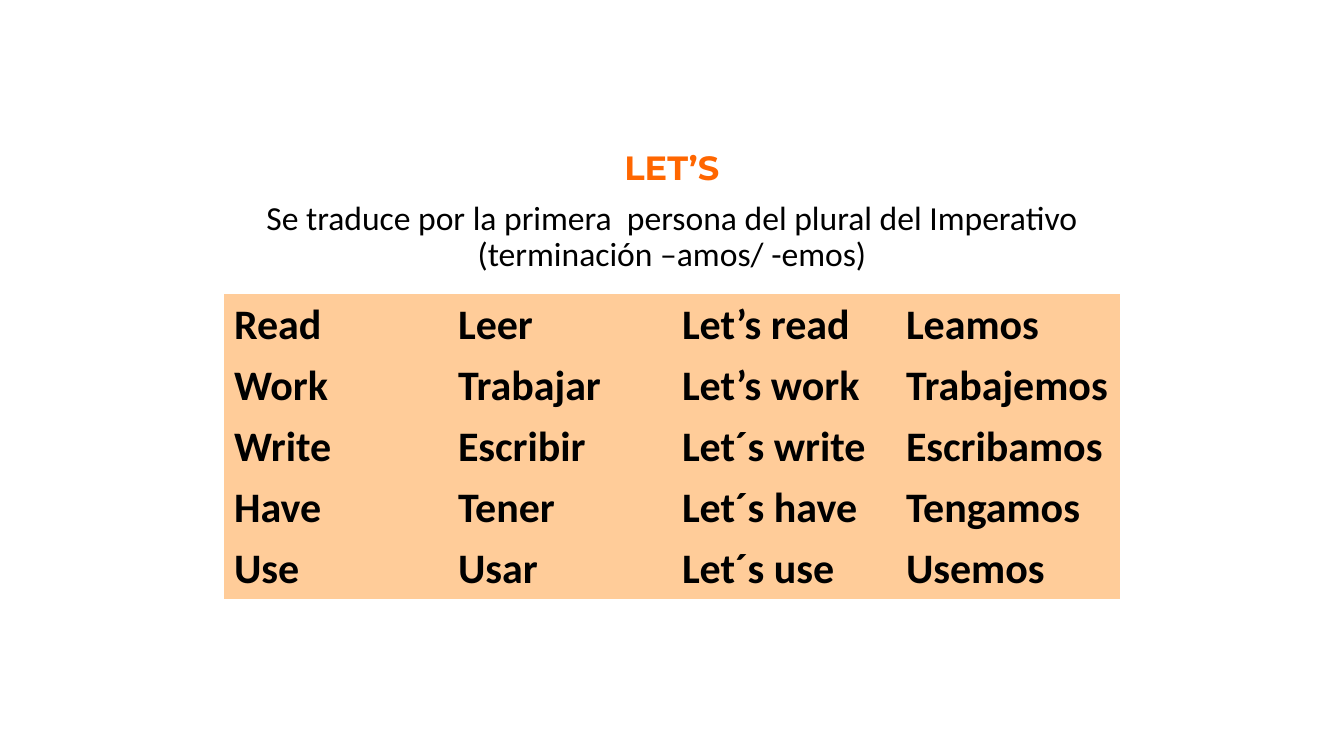
from pptx import Presentation
from pptx.dml.color import RGBColor as Color
from pptx.enum.text import MSO_ANCHOR as Anchor, PP_ALIGN as Align
from pptx.util import Emu, Pt

EMU_PER_PX = 914400 / 100.8
COLORS = {"title": "FF6600", "text": "000000", "cell": "FFCC99"}
EXPLANATION = (
    "Se traduce por la primera  persona del plural del Imperativo "
    "(terminación –amos/ -emos)"
)
VERBS = [
    ("Read", "Leer", "Let’s read", "Leamos"),
    ("Work", "Trabajar", "Let’s work", "Trabajemos"),
    ("Write", "Escribir", "Let´s write", "Escribamos"),
    ("Have", "Tener", "Let´s have", "Tengamos"),
    ("Use", "Usar", "Let´s use", "Usemos"),
]


def px(length):
    """Turn whole pixels into EMU."""
    return Emu(round(length * EMU_PER_PX))


def write(paragraph, text, *, size, font="Calibri", color="text", bold=False,
          align=Align.LEFT, line_spacing=None, space_before=None):
    """Put one formatted run of text into a paragraph."""
    paragraph.alignment = align
    if line_spacing is not None:
        paragraph.line_spacing = line_spacing
    if space_before is not None:
        paragraph.space_before = Pt(space_before)
    run = paragraph.add_run()
    run.text = text
    run.font.name = font
    run.font.size = Pt(size)
    run.font.bold = bold
    run.font.color.rgb = Color.from_string(COLORS[color])


def add_heading(slide, left, top, width, height):
    """Add the title with its explanation below."""
    frame = slide.shapes.add_textbox(px(left), px(top), px(width), px(height)).text_frame
    frame.word_wrap = True
    frame.vertical_anchor = Anchor.TOP
    layout = {"size": 24, "align": Align.CENTER, "line_spacing": 0.9, "space_before": 10}
    write(frame.paragraphs[0], "LET’S", font="Montserrat", color="title", bold=True, **layout)
    write(frame.add_paragraph(), EXPLANATION, **layout)


def add_verb_table(slide, rows, left, top, column_width, row_height):
    """Add the plain filled table of verbs."""
    column_count = len(rows[0])
    table = slide.shapes.add_table(
        len(rows), column_count, px(left), px(top),
        px(column_width * column_count), px(row_height * len(rows)),
    ).table
    table.first_row = False
    table.horz_banding = False
    for column in table.columns:
        column.width = px(column_width)
    for row, words in zip(table.rows, rows):
        row.height = px(row_height)
        for cell, word in zip(row.cells, words):
            cell.fill.solid()
            cell.fill.fore_color.rgb = Color.from_string(COLORS["cell"])
            write(cell.text_frame.paragraphs[0], word, size=30, bold=True)
    clear_table_style(table)


def clear_table_style(table):
    """Switch the table to the style without grid lines."""
    style = table._tbl.tblPr.find("{*}tableStyleId")
    style.text = "{2D5ABB26-0587-4C30-8999-92F81FD0307C}"


def main():
    """Build and save the slide."""
    presentation = Presentation()
    presentation.slide_width = px(1344)
    presentation.slide_height = px(756)
    slide = presentation.slides.add_slide(presentation.slide_layouts[6])
    add_heading(slide, 168, 146, 1008, 433)
    add_verb_table(slide, VERBS, 224, 294, 224, 61)
    presentation.save("out.pptx")


if __name__ == "__main__":
    main()
